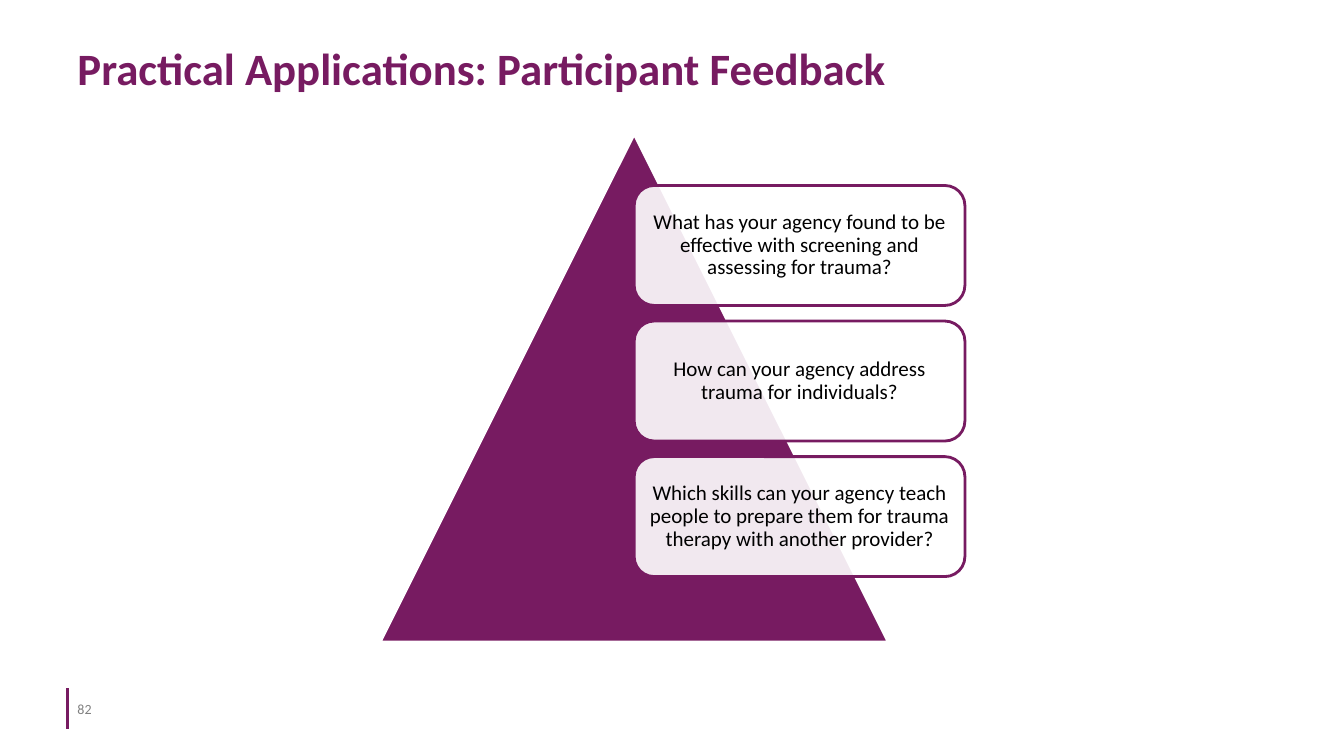
import pptx
import pptx.dml.color
import pptx.enum.shapes
import pptx.enum.text
import pptx.util
from lxml import etree
from pptx.util import Inches

PURPLE = "771B61"
MIDDLE = pptx.enum.text.MSO_ANCHOR.MIDDLE
SHAPES = pptx.enum.shapes.MSO_SHAPE


def color(hex_string):
    return pptx.dml.color.RGBColor.from_string(hex_string)


def write(shape, text, size, hex_string, bold=False):
    frame = shape.text_frame
    frame.word_wrap = True
    frame.vertical_anchor = MIDDLE
    paragraph = frame.paragraphs[0]
    paragraph.text = text
    paragraph.font.name = "Calibri"
    paragraph.font.size = pptx.util.Pt(size)
    paragraph.font.bold = bold
    paragraph.font.color.rgb = color(hex_string)
    return paragraph


presentation = pptx.Presentation()
presentation.slide_width = Inches(13.33)
presentation.slide_height = Inches(7.5)
slide = presentation.slides.add_slide(presentation.slide_layouts[6])
shapes = slide.shapes

footer_bar = shapes.add_connector(
    pptx.enum.shapes.MSO_CONNECTOR.STRAIGHT,
    Inches(0.67), Inches(7.23), Inches(0.67), Inches(6.83))
footer_bar.line.color.rgb = color(PURPLE)
footer_bar.line.width = pptx.util.Pt(2.25)
etree.SubElement(footer_bar.element.spPr, pptx.oxml.ns.qn("a:effectLst"))

title = shapes.add_textbox(Inches(0.67), Inches(0.15), Inches(12), Inches(1.04))
write(title, "Practical Applications: Participant Feedback", 32, PURPLE, True)

triangle = shapes.add_shape(
    SHAPES.ISOSCELES_TRIANGLE, Inches(3.77), Inches(1.33), Inches(5.04), Inches(5.04))
triangle.shadow.inherit = False
triangle.fill.solid()
triangle.fill.fore_color.rgb = color(PURPLE)
triangle.line.color.rgb = color("FFFFFF")
triangle.line.width = pptx.util.Pt(2)

questions = [
    "What has your agency found to be effective with screening and assessing for trauma?",
    "How can your agency address trauma for individuals?",
    "Which skills can your agency teach people to prepare them for trauma "
    "therapy with another provider?",
]
for index, question in enumerate(questions):
    card = shapes.add_shape(
        SHAPES.ROUNDED_RECTANGLE,
        Inches(6.29), Inches(1.84 + 1.345 * index), Inches(3.28), Inches(1.19))
    card.shadow.inherit = False
    card.fill.solid()
    card.fill.fore_color.rgb = color("FFFFFF")
    white = card.element.spPr.find(".//" + pptx.oxml.ns.qn("a:srgbClr"))
    etree.SubElement(white, pptx.oxml.ns.qn("a:alpha"), val="90000")
    card.line.color.rgb = color(PURPLE)
    card.line.width = pptx.util.Pt(2)
    frame = card.text_frame
    frame.margin_left = frame.margin_right = Inches(0.06)
    frame.margin_top = frame.margin_bottom = Inches(0.06)
    paragraph = write(card, question, 15, "000000")
    paragraph.alignment = pptx.enum.text.PP_ALIGN.CENTER
    paragraph.line_spacing = 0.9

page_number = shapes.add_textbox(Inches(0.67), Inches(6.83), Inches(0.61), Inches(0.4))
write(page_number, "82", 10, "808080")

presentation.save("out.pptx")
